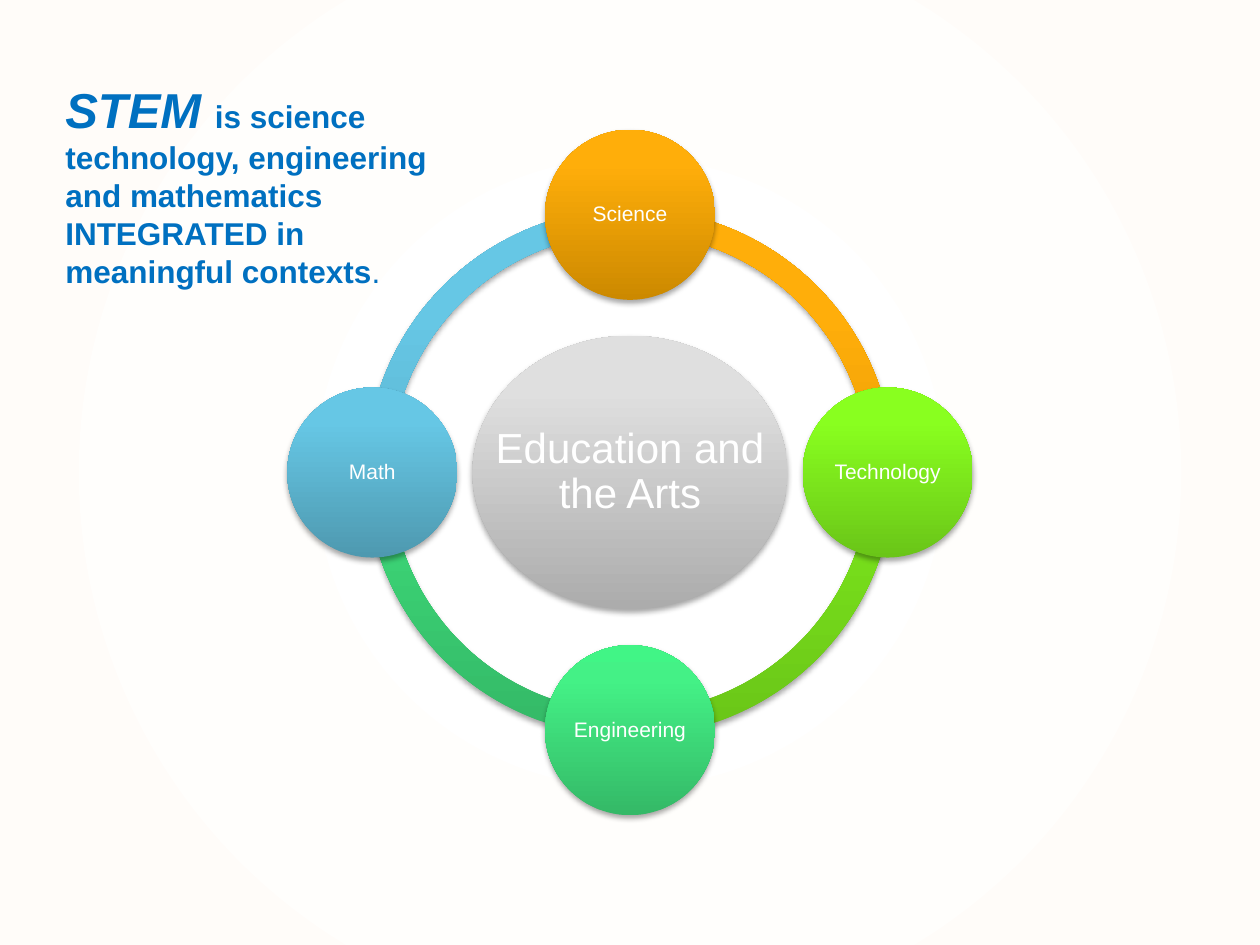
"""Build a slide showing the STEM subjects as a ring around education and the arts."""
from dataclasses import dataclass
from math import cos, pi, sin

from pptx import Presentation
from pptx.dml.color import RGBColor
from pptx.enum.shapes import MSO_SHAPE
from pptx.enum.text import MSO_ANCHOR, MSO_AUTO_SIZE, PP_ALIGN
from pptx.oxml import parse_xml
from pptx.oxml.ns import nsdecls, qn
from pptx.util import Inches, Pt

HUB = "Education and the Arts"
SUBJECTS = ["Science", "Technology", "Engineering", "Math"]
STATEMENT = [
    [("STEM ", "lead"), ("is science", "body")],
    [("technology, engineering", "body")],
    [("and mathematics", "body")],
    [("INTEGRATED in", "body")],
    [("meaningful contexts", "body"), (".", "plain")],
]


@dataclass(frozen=True)
class Theme:
    font: str = "Arial"
    label: str = "FFFFFF"
    statement: str = "0070C0"
    hub_size: int = 24
    node_size: int = 12
    background: tuple = ((10, "FFFFFF"), (100, "FFFCF9"))
    hub: tuple = ((0, "ACACAC"), (80, "DFDFDF"), (100, "E0E0E0"))
    nodes: tuple = (
        ((0, "CC8900"), (80, "FFAE0A"), (100, "FFAF0B")),
        ((0, "6AC518"), (80, "89FF1F"), (100, "8AFF21")),
        ((0, "34B967"), (80, "44F186"), (100, "41F586")),
        ((0, "4E99B0"), (80, "66C7E5"), (100, "64C9E8")),
    )


THEME = Theme()
STYLES = {"lead": (28, True, True), "body": (18, True, False), "plain": (18, False, False)}
WIDTH, HEIGHT = 10, 7.5
CENTER = (WIDTH / 2, HEIGHT / 2)
RING, ORBIT, NODE = 4.19, 2.045, 1.35
HUB_SIZE = (2.5, 2.17)
QUARTER = 54
UPWARD = '<a:lin ang="16200000" scaled="0"/>'
RADIAL = '<a:path path="circle"><a:fillToRect l="50000" t="50000" r="50000" b="50000"/></a:path>'
SHADOW = (
    f'<a:outerShdw {nsdecls("a")} blurRad="40000" dist="23000" dir="5400000" rotWithShape="0">'
    '<a:srgbClr val="000000"><a:alpha val="35000"/></a:srgbClr></a:outerShdw>'
)


def set_gradient(fill, parent, stops, direction):
    fill.gradient()
    gs = "".join(
        f'<a:gs pos="{pos * 1000}"><a:srgbClr val="{color}"/></a:gs>' for pos, color in stops
    )
    grad = parse_xml(
        f'<a:gradFill {nsdecls("a")} rotWithShape="1"><a:gsLst>{gs}</a:gsLst>{direction}</a:gradFill>'
    )
    parent.replace(parent.find(qn("a:gradFill")), grad)


def box(center, size):
    (x, y), (w, h) = center, size
    return [Inches(v) for v in (x - w / 2, y - h / 2, w, h)]


def format_run(r, size, color, bold=False, italic=False):
    r.font.name, r.font.size = THEME.font, Pt(size)
    r.font.color.rgb = RGBColor.from_string(color)
    r.font.bold, r.font.italic = bold, italic


def add_solid(slide, kind, center, size, stops):
    sp = slide.shapes.add_shape(kind, *box(center, size))
    sp.line.fill.background()
    set_gradient(sp.fill, sp.element.spPr, stops, UPWARD)
    sp.shadow.inherit = False
    sp.element.spPr.find(qn("a:effectLst")).append(parse_xml(SHADOW))
    return sp


def add_disc(slide, center, size, stops, text, font_size, inset):
    add_solid(slide, MSO_SHAPE.OVAL, center, size, stops)
    tf = slide.shapes.add_textbox(*box(center, size)).text_frame
    tf.word_wrap, tf.vertical_anchor = True, MSO_ANCHOR.MIDDLE
    tf.margin_left = tf.margin_right = tf.margin_top = tf.margin_bottom = Inches(inset)
    tf.text = text
    p = tf.paragraphs[0]
    p.alignment, p.line_spacing = PP_ALIGN.CENTER, 0.9
    format_run(p.runs[0], font_size, THEME.label)


def add_ring(slide):
    for i in reversed(range(len(SUBJECTS))):
        arc = add_solid(slide, MSO_SHAPE.BLOCK_ARC, CENTER, (RING, RING), THEME.nodes[i])
        arc.adjustments[0] = (i + 3) % 4 * QUARTER
        arc.adjustments[1] = i * QUARTER
        arc.adjustments[2] = 0.046


def add_nodes(slide):
    for i, (subject, stops) in enumerate(zip(SUBJECTS, THEME.nodes)):
        angle = (i - 1) * pi / 2
        center = (CENTER[0] + ORBIT * cos(angle), CENTER[1] + ORBIT * sin(angle))
        add_disc(slide, center, (NODE, NODE), stops, subject, THEME.node_size, 0.02)


def add_statement(slide):
    tf = slide.shapes.add_textbox(*map(Inches, (0.42, 0.58, 3.15, 1.78))).text_frame
    tf.word_wrap, tf.auto_size = False, MSO_AUTO_SIZE.SHAPE_TO_FIT_TEXT
    for i, line in enumerate(STATEMENT):
        p = tf.add_paragraph() if i else tf.paragraphs[0]
        for text, style in line:
            r = p.add_run()
            r.text = text
            size, bold, italic = STYLES[style]
            format_run(r, size, THEME.statement, bold, italic)


def main():
    prs = Presentation()
    prs.slide_width, prs.slide_height = Inches(WIDTH), Inches(HEIGHT)
    slide = prs.slides.add_slide(prs.slide_layouts[6])
    fill = slide.background.fill
    set_gradient(fill, slide.element.find(".//" + qn("p:bgPr")), THEME.background, RADIAL)
    add_ring(slide)
    add_disc(slide, CENTER, HUB_SIZE, THEME.hub, HUB, THEME.hub_size, 0.03)
    add_nodes(slide)
    add_statement(slide)
    prs.save("out.pptx")


if __name__ == "__main__":
    main()
